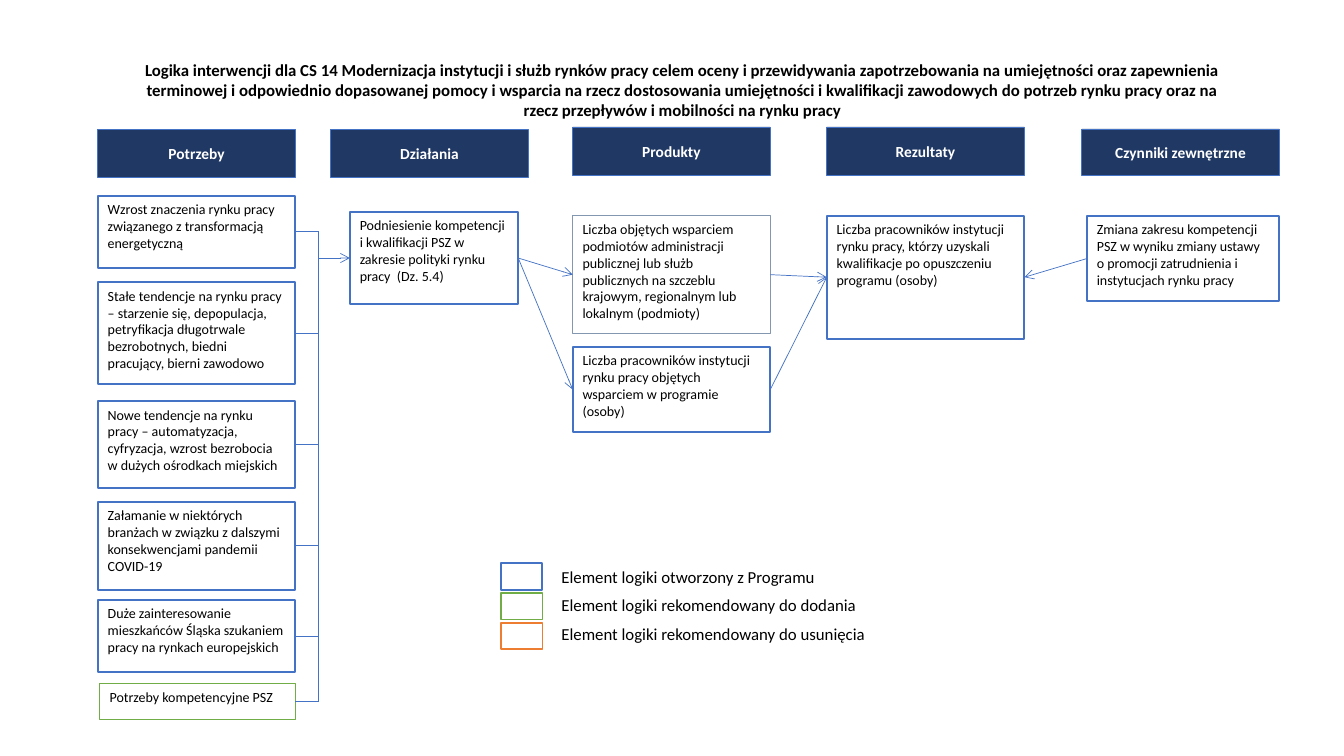
from lxml import etree
from pptx import Presentation
from pptx.dml.color import RGBColor
from pptx.enum.shapes import MSO_CONNECTOR as Connector, MSO_SHAPE as Shape
from pptx.enum.text import MSO_ANCHOR as Anchor, MSO_AUTO_SIZE as AutoSize, PP_ALIGN as Align
from pptx.oxml.ns import qn
from pptx.util import Inches, Pt

NAVY, BLUE, SLATE, GREEN, ORANGE = "203864", "4472C4", "8497B0", "70AD47", "ED7D31"
WHITE, BLACK = "FFFFFF", "000000"
TOP, LEFT, BOTTOM, RIGHT = range(4)

TITLE = (
    "Logika interwencji dla CS 14 Modernizacja instytucji i służb rynków pracy celem oceny "
    "i przewidywania zapotrzebowania na umiejętności oraz zapewnienia terminowej i odpowiednio "
    "dopasowanej pomocy i wsparcia na rzecz dostosowania umiejętności i kwalifikacji zawodowych "
    "do potrzeb rynku pracy oraz na rzecz przepływów i mobilności na rynku pracy"
)

# Column headings: text, left, top, height
HEADINGS = [
    ("Potrzeby", 0.97, 1.28, 0.48),
    ("Działania", 3.28, 1.28, 0.48),
    ("Produkty", 5.68, 1.26, 0.48),
    ("Rezultaty", 8.2, 1.26, 0.48),
    ("Czynniki zewnętrzne", 10.73, 1.28, 0.46),
]
COLUMN_WIDTH = 1.96

# Boxes: text, (left, top, width, height), line colour, line width
NEEDS = [
    ("Wzrost znaczenia rynku pracy związanego z transformacją energetyczną",
     (0.97, 1.94, 1.96, 0.72), BLUE, 1.5),
    ("Stałe tendencje na rynku pracy – starzenie się, depopulacja, petryfikacja długotrwale "
     "bezrobotnych, biedni pracujący, bierni zawodowo",
     (0.97, 2.8, 1.96, 1.01), BLUE, 1.5),
    ("Nowe tendencje na rynku pracy – automatyzacja, cyfryzacja, wzrost bezrobocia "
     "w dużych ośrodkach miejskich",
     (0.97, 3.98, 1.96, 0.86), BLUE, 1.5),
    ("Załamanie w niektórych branżach w związku z dalszymi konsekwencjami pandemii COVID-19",
     (0.97, 4.98, 1.96, 0.87), BLUE, 1.5),
    ("Duże zainteresowanie mieszkańców Śląska szukaniem pracy na rynkach europejskich",
     (0.97, 5.95, 1.96, 0.72), BLUE, 1.5),
    ("Potrzeby kompetencyjne PSZ", (0.99, 6.78, 1.94, 0.36), GREEN, 1),
]
STEPS = {
    "action": ("Podniesienie kompetencji i kwalifikacji PSZ w zakresie polityki rynku pracy  (Dz. 5.4)",
               (3.47, 2.1, 1.67, 0.92), BLUE, 1.5),
    "entities": ("Liczba objętych wsparciem podmiotów administracji publicznej lub służb publicznych "
                 "na szczeblu krajowym, regionalnym lub lokalnym (podmioty)",
                 (5.68, 2.14, 1.96, 1.17), SLATE, 1),
    "staff": ("Liczba pracowników instytucji rynku pracy objętych wsparciem w programie (osoby)",
              (5.68, 3.44, 1.96, 0.85), BLUE, 1.5),
    "result": ("Liczba pracowników instytucji rynku pracy, którzy uzyskali kwalifikacje "
               "po opuszczeniu programu (osoby)",
               (8.2, 2.14, 1.96, 1.22), BLUE, 1.5),
    "external": ("Zmiana zakresu kompetencji PSZ w wyniku zmiany ustawy o promocji zatrudnienia "
                 "i instytucjach rynku pracy",
                 (10.78, 2.14, 1.91, 0.85), BLUE, 1.5),
}
ARROWS = [
    ("action", RIGHT, "entities", LEFT),
    ("action", RIGHT, "staff", LEFT),
    ("entities", RIGHT, "result", LEFT),
    ("staff", RIGHT, "result", LEFT),
    ("external", LEFT, "result", RIGHT),
]
LEGEND = [
    ("Element logiki otworzony z Programu", BLUE, 1.5),
    ("Element logiki rekomendowany do dodania", GREEN, 1),
    ("Element logiki rekomendowany do usunięcia", ORANGE, 1),
]
LEGEND_TOP, LEGEND_STEP = 5.59, 0.295
SPINE_X = 3.16


def color(value):
    return RGBColor.from_string(value)


def write(frame, *lines, size=10, ink=BLACK, bold=False, align=Align.LEFT,
          anchor=Anchor.TOP, before=0):
    frame.word_wrap = True
    frame.vertical_anchor = anchor
    for index, line in enumerate(lines):
        paragraph = frame.add_paragraph() if index else frame.paragraphs[0]
        paragraph.alignment = align
        paragraph.space_before = Pt(before)
        run = paragraph.add_run()
        run.text = line
        font = run.font
        font.name, font.size, font.bold = "Calibri", Pt(size), bold
        font.color.rgb = color(ink)


def add_box(place, line, weight, fill=WHITE):
    shape = slide.shapes.add_shape(Shape.RECTANGLE, *map(Inches, place))
    shape.shadow.inherit = False
    shape.fill.solid()
    shape.fill.fore_color.rgb = color(fill)
    shape.line.color.rgb = color(line)
    shape.line.width = Pt(weight)
    return shape


def add_text_box(text, place, line, weight):
    shape = add_box(place, line, weight)
    write(shape.text_frame, text)
    return shape


def add_line(start=(0, 0), end=(0, 0), source=None, target=None, arrow=False):
    """Draw a line; source and target are (shape, side) pairs to join."""
    connector = slide.shapes.add_connector(Connector.STRAIGHT, *start, *end)
    if source:
        connector.begin_connect(*source)
    if target:
        connector.end_connect(*target)
    connector.line.color.rgb = color(BLUE)
    connector.line.width = Pt(0.5)
    if arrow:
        etree.SubElement(connector.line._get_or_add_ln(), qn("a:tailEnd"), type="arrow")
    etree.SubElement(connector._element.spPr, qn("a:effectLst"))


def middle(shape):
    return shape.top + shape.height // 2


presentation = Presentation()
presentation.slide_width, presentation.slide_height = Inches(13.33), Inches(7.5)
slide = presentation.slides.add_slide(presentation.slide_layouts[5])

# Title
title = slide.shapes.title
title.left, title.top, title.width, title.height = map(Inches, (1.19, 0.54, 11.16, 0.71))
write(title.text_frame, TITLE, size=12, bold=True, align=Align.CENTER)
title.text_frame.auto_size = AutoSize.SHAPE_TO_FIT_TEXT

# Column headings
for text, left, top, height in HEADINGS:
    heading = add_box((left, top, COLUMN_WIDTH, height), BLUE, 0.5, fill=NAVY)
    write(heading.text_frame, text, size=11, ink=WHITE, bold=True,
          align=Align.CENTER, anchor=Anchor.MIDDLE)

# Boxes and the arrows between them
needs = [add_text_box(*need) for need in NEEDS]
steps = {name: add_text_box(*step) for name, step in STEPS.items()}
for source, source_side, target, target_side in ARROWS:
    add_line(source=(steps[source], source_side), target=(steps[target], target_side), arrow=True)

# Bracket that gathers the needs and leads to the action
spine = Inches(SPINE_X)
for need in needs:
    add_line(end=(spine, middle(need)), source=(need, RIGHT))
add_line((spine, middle(needs[0])), (spine, middle(needs[-1])))
add_line((spine, middle(steps["action"])), target=(steps["action"], LEFT), arrow=True)

# Legend
for row, (text, line, weight) in enumerate(LEGEND):
    add_box((4.97, LEGEND_TOP + row * LEGEND_STEP, 0.41, 0.26), line, weight)
legend = slide.shapes.add_textbox(*map(Inches, (5.47, 5.57, 4.01, 0.88)))
write(legend.text_frame, *[text for text, line, weight in LEGEND], size=12, before=6)
legend.text_frame.auto_size = AutoSize.SHAPE_TO_FIT_TEXT

presentation.save("out.pptx")
